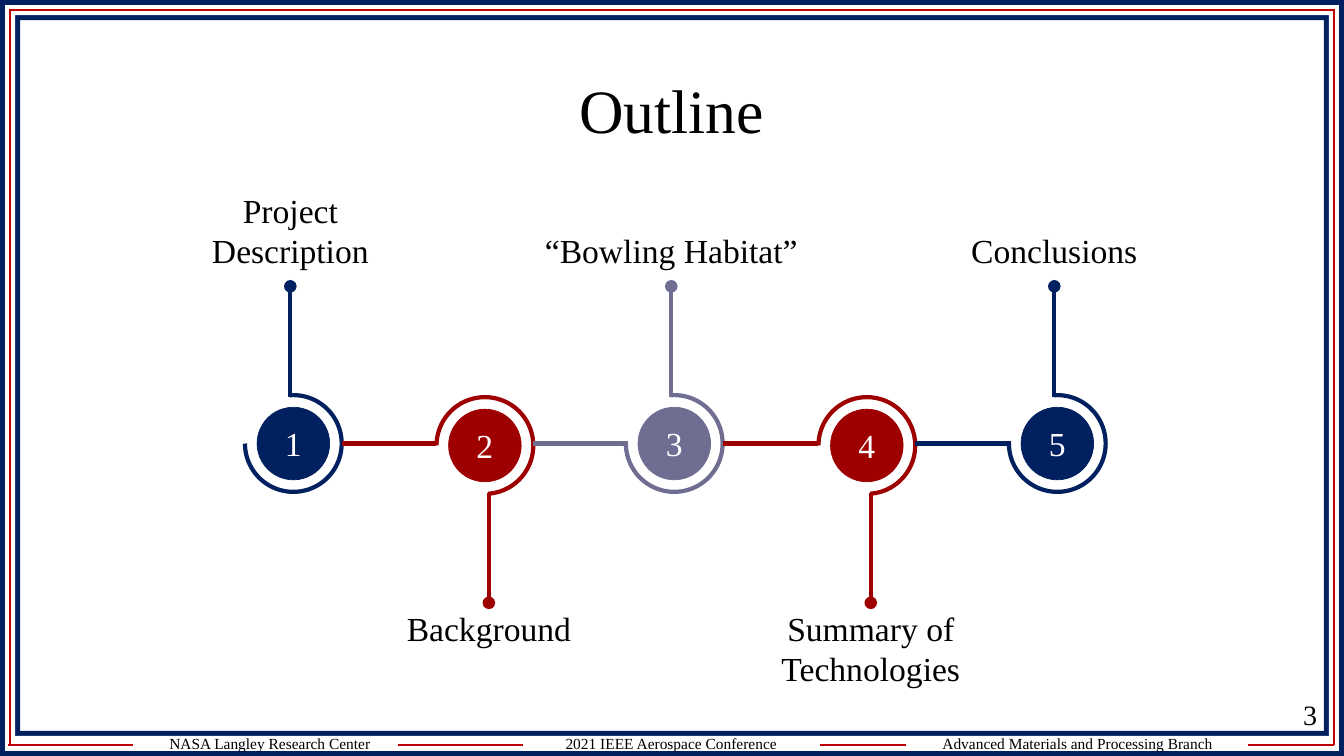
"""Build the Outline slide: a five-step timeline inside a navy and red frame."""
from pptx import Presentation
from pptx.dml.color import RGBColor
from pptx.enum.shapes import MSO_CONNECTOR, MSO_SHAPE as SH
from pptx.enum.text import MSO_ANCHOR as ANC, PP_ALIGN as AL
from pptx.oxml.ns import qn
from pptx.util import Pt
from lxml.etree import SubElement

FONT = "Times New Roman"
NAVY, RED, MAROON, MAUVE = "002060", "C00000", "9E0000", "6F6D92"
BLACK, WHITE = "000000", "FFFFFF"
W, H = 960, 540

STEPS = [
    ("Project Description", 175, NAVY, 166.3),
    ("Background", 311.8, MAROON, 166.3),
    ("“Bowling Habitat”", 447.1, MAUVE, 203),
    ("Summary of Technologies", 584.6, MAROON, 166.3),
    ("Conclusions", 720.7, NAVY, 166.3),
]
FOOTERS = [
    ("NASA Langley Research Center", 113.8, 159.8, AL.LEFT),
    ("2021 IEEE Aerospace Conference", 396, 167, AL.CENTER),
    ("Advanced Materials and Processing Branch", 665.3, 208.1, AL.RIGHT),
]
BARS = [
    (W - 14.4, 0, 14.4, H, NAVY),
    (0, 0, 14.4, H, NAVY),
    (0, 0, W, 14.4, NAVY),
    (0, H - 18, W, 18, NAVY),
    (3.6, H - 14.4, W - 7.2, 10.8, WHITE),
    (3.6, 3.6, W - 7.2, 7.2, WHITE),
    (W - 10.8, 3.6, 7.2, H - 7.2, WHITE),
    (3.6, 3.6, 7.2, H - 7.2, WHITE),
]
RULE_Y = 532.1
RULES = [(7.2, 7.2, 953, 7.2), (7.2, RULE_Y, 7.2, 6.5), (953, RULE_Y, 953, 6.5)]
RULES += [(x1, RULE_Y, x2, RULE_Y) for x1, x2 in
          [(5.8, 95), (284.4, 373.7), (585.4, 647.3), (891.4, 953)]]

RING, DISC, AXIS_Y = 69.1, 51.84, 316.8
LABEL_H = 65.5


def rgb(value):
    return RGBColor.from_string(value)


def write(tf, text, size=24, color=BLACK, align=AL.CENTER, anchor=ANC.TOP, wrap=True):
    tf.word_wrap = wrap
    tf.vertical_anchor = anchor
    p = tf.paragraphs[0]
    p.alignment = align
    r = p.add_run()
    r.text = text
    r.font.name, r.font.size = FONT, Pt(size)
    r.font.color.rgb = rgb(color)
    return p


def add_text(s, x, y, w, h, text, **fmt):
    tb = s.shapes.add_textbox(Pt(x), Pt(y), Pt(w), Pt(h))
    write(tb.text_frame, text, **fmt)


def add_shape(s, kind, x, y, w, h, fill=None, line=None, width=0.5):
    sp = s.shapes.add_shape(kind, Pt(x), Pt(y), Pt(w), Pt(h))
    sp.shadow.inherit = False
    if fill:
        sp.fill.solid()
        sp.fill.fore_color.rgb = rgb(fill)
    else:
        sp.fill.background()
    if line:
        sp.line.color.rgb = rgb(line)
        sp.line.width = Pt(width)
    else:
        sp.line.fill.background()
    return sp


def add_line(s, x1, y1, x2, y2, color, width=3, dot=False):
    c = s.shapes.add_connector(MSO_CONNECTOR.STRAIGHT, Pt(x1), Pt(y1), Pt(x2), Pt(y2))
    c.line.color.rgb = rgb(color)
    c.line.width = Pt(width)
    if dot:
        SubElement(c.line._get_or_add_ln(), qn("a:tailEnd"), type="oval")
    SubElement(c._element.spPr, qn("a:effectLst"))


def add_step(s, i, label, x, color, label_w):
    up = i % 2 == 0
    ring_y = AXIS_Y - RING / 2 + (0 if up else 1.4)
    ring = add_shape(s, SH.ARC, x, ring_y, RING, RING, line=color, width=3)
    start, end = (159.57, 107.96) if up else (0.11, 159.7)
    ring.adjustments[0], ring.adjustments[1] = start, end
    ring.rotation = 0 if up else 180

    if i:
        previous_x = STEPS[i - 1][1]
        add_line(s, previous_x + RING, AXIS_Y, x + (1.4 if up else 0), AXIS_Y, color)

    stem_x = x + (32.4 if up else 37.4)
    stem_y, tip_y = (283.7, 204.5) if up else (352.1, 430.6)
    add_line(s, stem_x, stem_y, stem_x, tip_y, color, dot=True)

    inset = (RING - DISC) / 2
    disc = add_shape(s, SH.OVAL, x + inset, ring_y + inset, DISC, DISC, color, color)
    write(disc.text_frame, str(i + 1), color=WHITE, anchor=ANC.MIDDLE)

    label_y = 196.6 - LABEL_H if up else tip_y
    add_text(s, stem_x - label_w / 2, label_y, label_w, LABEL_H, label,
             anchor=ANC.BOTTOM if up else ANC.TOP)


def main():
    prs = Presentation()
    prs.slide_width, prs.slide_height = Pt(W), Pt(H)
    s = prs.slides.add_slide(prs.slide_layouts[5])

    for x, y, w, h, color in BARS:
        add_shape(s, SH.RECTANGLE, x, y, w, h, color)
    for ends in RULES:
        add_line(s, *ends, RED, 1.5)
    for text, x, w, align in FOOTERS:
        add_text(s, x, 520.6, w, 20.9, text, size=11, align=align, wrap=False)

    title = s.shapes.title
    title.left, title.top, title.width, title.height = Pt(66), Pt(28.8), Pt(828), Pt(104.4)
    write(title.text_frame, "Outline", size=44, anchor=ANC.MIDDLE).line_spacing = 0.9
    add_text(s, 732, 496.1, 216, 28.8, "3", size=20, align=AL.RIGHT, anchor=ANC.MIDDLE)

    for i, step in enumerate(STEPS):
        add_step(s, i, *step)
    prs.save("out.pptx")


if __name__ == "__main__":
    main()
